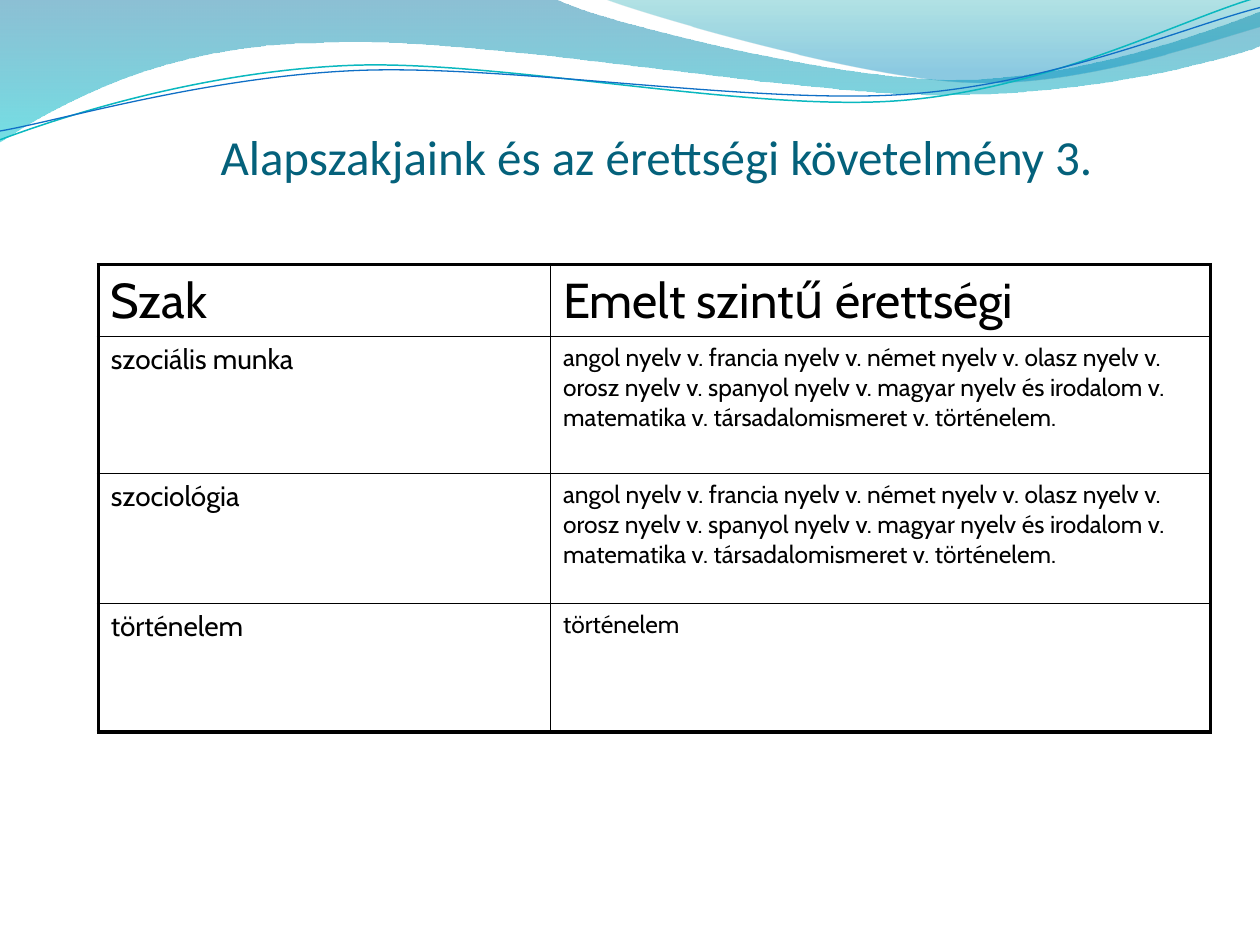
from lxml import etree
from pptx import Presentation
from pptx.dml.color import RGBColor
from pptx.enum import text
from pptx.oxml import ns
from pptx.util import Inches, Pt

BLACK = RGBColor(0, 0, 0)
TITLE = RGBColor(0x04, 0x61, 0x7B)
DEEP = RGBColor(0x00, 0x74, 0xA1)
AQUA = RGBColor(0x00, 0xC6, 0xCF)
TEAL = RGBColor(0x00, 0xA1, 0xA9)
SKY = RGBColor(0x00, 0x8B, 0xBF)
CYAN = RGBColor(0x0A, 0xB8, 0xBF)
BLUE = RGBColor(0x0F, 0x6F, 0xC6)

BANDS = [
    ([[(0, -0.01)], [(4.4, -0.01)],
      [(4.76, 0.17), (6.64, 0.63), (7.58, 0.63)],
      [(8.53, 0.63), (9.58, 0.26), (10, 0.09)], [(10.01, 0.36)],
      [(9.83, 0.44), (8.7, 0.76), (7.46, 0.75)],
      [(6.22, 0.75), (3.82, 0.28), (2.57, 0.34)],
      [(1.29, 0.35), (0.46, 0.83), (-0.01, 1.13)]],
     [(0, DEEP, 45), (1, AQUA, 55)]),
    ([[(4.79, -0.01)],
      [(5.09, 0.11), (6.82, 0.62), (7.69, 0.65)],
      [(8.56, 0.69), (9.61, 0.32), (10, 0.21)], [(10, 0)]],
     [(0, TEAL, 30), (0.8, SKY, 45)]),
]
WAVES = [
    ([[(0, 1.11)],
      [(0.48, 0.93), (1.58, 0.57), (2.77, 0.52)],
      [(3.95, 0.47), (5.93, 0.89), (7.13, 0.8)],
      [(8.33, 0.71), (9.38, 0.15), (9.98, -0.02)]], CYAN, 0.85),
    ([[(0, 1.04)],
      [(0.47, 0.96), (1.64, 0.61), (2.83, 0.56)],
      [(4.03, 0.51), (5.97, 0.83), (7.17, 0.75)],
      [(8.36, 0.67), (9.41, 0.21), (10, 0.06)]], BLUE, 0.75),
]
EXAMS = ("angol nyelv v. francia nyelv v. német nyelv v. olasz nyelv v. "
         "orosz nyelv v. spanyol nyelv v. magyar nyelv és irodalom v. "
         "matematika v. társadalomismeret v. történelem.")
ROWS = [("Szak", "Emelt szintű érettségi"), ("szociális munka", EXAMS),
        ("szociológia", EXAMS), ("történelem", "történelem")]
WIDTHS = [3.59, 5.24]
HEIGHTS = [0.57, 1.09, 1.03, 1.02]


def bend(shape, parts):
    lines = iter(list(shape._element.spPr.iter(ns.qn("a:lnTo"))))
    for part in parts[1:]:
        group = [next(lines) for _ in part]
        if len(group) == 1:
            continue
        curve = etree.Element(ns.qn("a:cubicBezTo"))
        group[0].addprevious(curve)
        for line in group:
            curve.append(line[0])
            line.getparent().remove(line)


def outline(slide, box, parts, close):
    left, top = box
    points = [(Inches(left + x), Inches(top + y)) for part in parts for x, y in part]
    pen = slide.shapes.build_freeform(*points[0], scale=1)
    pen.add_line_segments(points[1:], close=close)
    shape = pen.convert_to_shape()
    bend(shape, parts)
    shape.shadow.inherit = False
    return shape


def add_band(slide, box, parts, stops):
    shape = outline(slide, box, parts, True)
    shape.line.fill.background()
    shape.fill.gradient()
    shape.fill.gradient_angle = 270
    for stop, (place, color, _) in zip(shape.fill.gradient_stops, stops):
        stop.position = place
        stop.color.rgb = color
    marks = shape._element.spPr.iter(ns.qn("a:srgbClr"))
    for mark, (_, _, alpha) in zip(marks, stops):
        etree.SubElement(mark, ns.qn("a:alpha")).set("val", str(alpha * 1000))


def add_wave(slide, box, parts, color, width):
    shape = outline(slide, box, parts, False)
    shape.fill.background()
    shape.line.color.rgb = color
    shape.line.width = Pt(width)


def add_header(slide, box):
    for band in BANDS:
        add_band(slide, box, *band)
    for wave in WAVES:
        add_wave(slide, box, *wave)


def write(frame, words, name, size, color):
    run = frame.paragraphs[0].add_run()
    run.text = words
    for key, value in {"name": name, "size": Pt(size)}.items():
        setattr(run.font, key, value)
    run.font.color.rgb = color


def add_title(slide, box):
    frame = slide.shapes.add_textbox(*map(Inches, box)).text_frame
    style = {"word_wrap": True, "vertical_anchor": text.MSO_ANCHOR.BOTTOM,
             "margin_left": 0, "margin_right": 0,
             "margin_top": Inches(0.05), "margin_bottom": 0}
    for key, value in style.items():
        setattr(frame, key, value)
    write(frame, "Alapszakjaink és az érettségi követelmény 3.", "Calibri", 28, TITLE)


def add_edges(cell, edges):
    props = cell._tc.get_or_add_tcPr()
    for index, (side, width) in enumerate(edges.items()):
        line = etree.Element(ns.qn(f"a:ln{side}"), w=str(Pt(width)))
        fill = etree.SubElement(line, ns.qn("a:solidFill"))
        etree.SubElement(fill, ns.qn("a:srgbClr"), val=str(BLACK))
        props.insert(index, line)


def add_grid(slide, box):
    table = slide.shapes.add_table(len(ROWS), len(WIDTHS), *map(Inches, box)).table
    table.horz_banding = False
    table.first_row = False
    for column, width in zip(table.columns, WIDTHS):
        column.width = Inches(width)
    for row, height in zip(table.rows, HEIGHTS):
        row.height = Inches(height)
    for r, row in enumerate(ROWS):
        for c, words in enumerate(row):
            cell = table.cell(r, c)
            cell.fill.background()
            size = 28 if r == 0 else (16, 14)[c]
            write(cell.text_frame, words, "Cabin", size, BLACK)
            outer = {"L": c == 0, "R": c == len(WIDTHS) - 1,
                     "T": r == 0, "B": r == len(ROWS) - 1}
            add_edges(cell, {side: 2.25 if edge else 1 for side, edge in outer.items()})


def main():
    deck = Presentation()
    deck.slide_width, deck.slide_height = Inches(10), Inches(7.5)
    slide = deck.slides.add_slide(deck.slide_layouts[6])
    add_header(slide, (0, 0))
    add_title(slide, (1.75, 0.34, 8.25, 1.13))
    add_grid(slide, (0.78, 2.1, sum(WIDTHS), sum(HEIGHTS)))
    deck.save("out.pptx")


if __name__ == "__main__":
    main()
